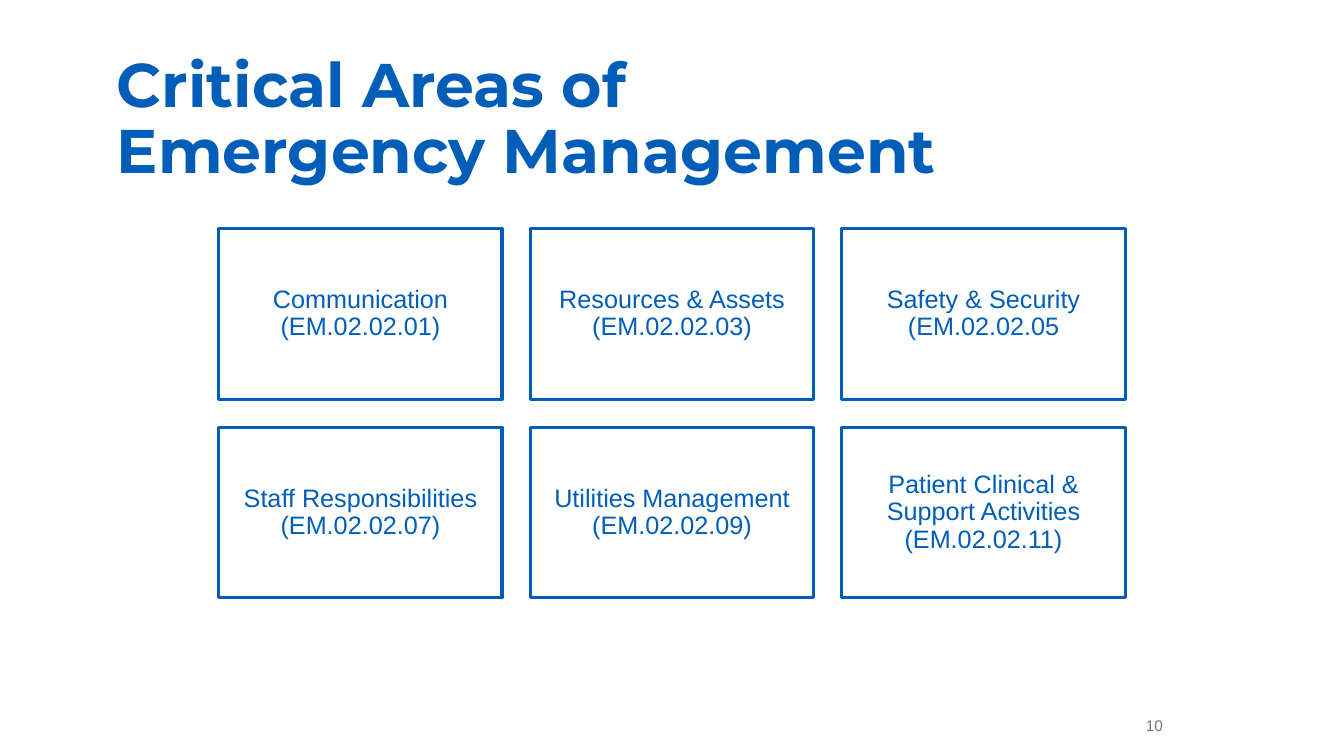
"""Build the slide on the six critical areas of emergency management."""
from pptx import Presentation
from pptx.dml.color import RGBColor
from pptx.enum.shapes import MSO_SHAPE as Shape
from pptx.enum.text import MSO_ANCHOR as Anchor, PP_ALIGN as Align
from pptx.util import Inches, Pt

BLUE = RGBColor(0x00, 0x5E, 0xB8)
GREY = RGBColor(0x77, 0x77, 0x7A)
WHITE = RGBColor(0xFF, 0xFF, 0xFF)

COLUMNS = 3
LEFT, TOP = 2.17, 2.27
CARD_WIDTH, CARD_HEIGHT, GAP = 2.81, 1.69, 0.28

AREAS = [
    "Communication (EM.02.02.01)",
    "Resources & Assets (EM.02.02.03)",
    "Safety & Security (EM.02.02.05",
    "Staff Responsibilities (EM.02.02.07)",
    "Utilities Management (EM.02.02.09)",
    "Patient Clinical & Support Activities (EM.02.02.11)",
]


def write(holder, text, align, spacing, **font_values):
    """Put one vertically centred, wrapped paragraph into a shape."""
    frame = holder.text_frame
    frame.word_wrap = True
    frame.vertical_anchor = Anchor.MIDDLE
    paragraph = frame.paragraphs[0]
    paragraph.text = text
    paragraph.alignment = align
    paragraph.line_spacing = spacing
    color = font_values.pop("color")
    for line in paragraph.runs:
        line.font.color.rgb = color
        for key, value in font_values.items():
            setattr(line.font, key, value)


deck = Presentation()
deck.slide_width, deck.slide_height = Inches(13.33), Inches(7.5)
slide = deck.slides.add_slide(deck.slide_layouts[6])

title = slide.shapes.add_textbox(Inches(1.06), Inches(0.47), Inches(9.76), Inches(1.45))
write(title, "Critical Areas of\vEmergency Management", Align.LEFT, 0.9,
      name="Montserrat", size=Pt(44), bold=True, color=BLUE)

page_number = slide.shapes.add_textbox(Inches(11.18), Inches(6.99), Inches(0.54), Inches(0.41))
write(page_number, "10", Align.CENTER, 1.0, name="Arial", size=Pt(11), color=GREY)

for index, area in enumerate(AREAS):
    row, column = divmod(index, COLUMNS)
    card = slide.shapes.add_shape(
        Shape.RECTANGLE,
        Inches(LEFT + column * (CARD_WIDTH + GAP)),
        Inches(TOP + row * (CARD_HEIGHT + GAP)),
        Inches(CARD_WIDTH), Inches(CARD_HEIGHT))
    card.shadow.inherit = False
    card.fill.solid()
    card.fill.fore_color.rgb = WHITE
    card.line.color.rgb = BLUE
    card.line.width = Pt(2.25)
    for side in ("left", "top", "right", "bottom"):
        setattr(card.text_frame, f"margin_{side}", Inches(0.07))
    write(card, area, Align.CENTER, 0.9, name="Arial", size=Pt(18), color=BLUE)

deck.save("out.pptx")
